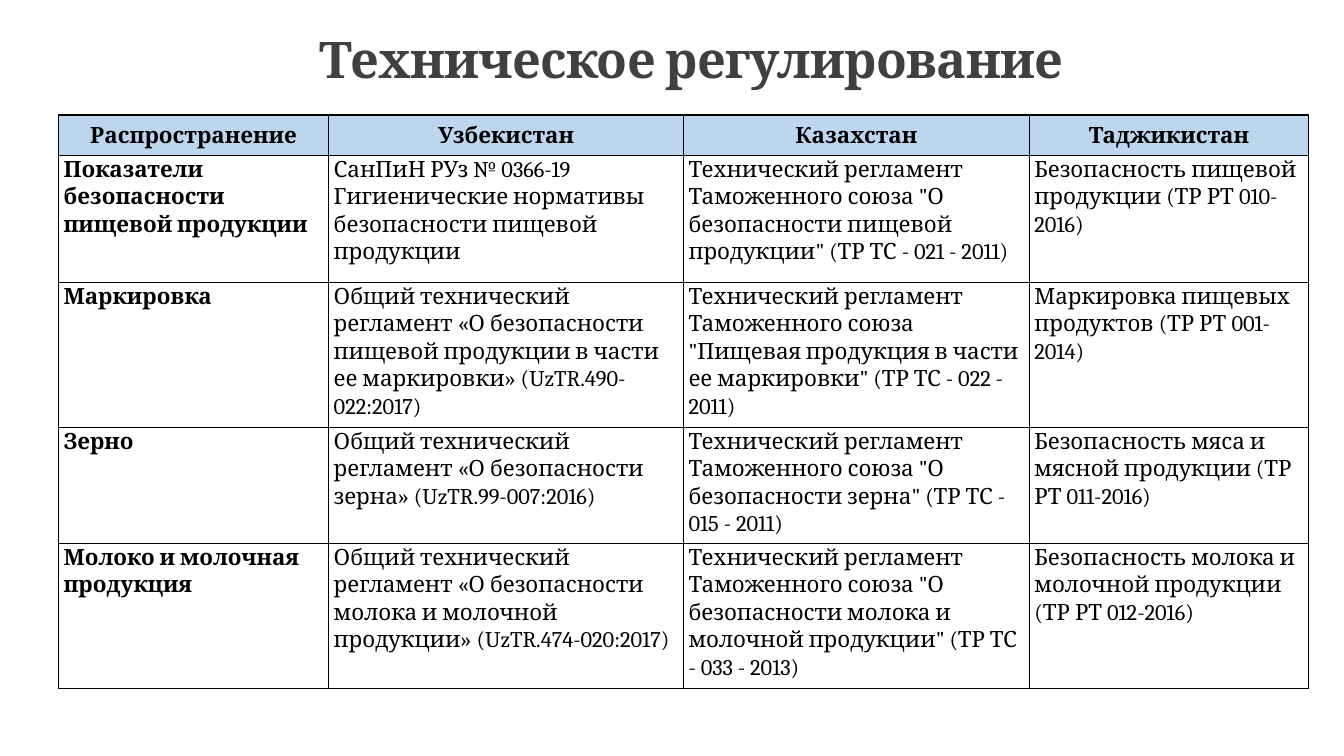
from pptx import Presentation
from pptx.dml.color import RGBColor
from pptx.enum.text import MSO_ANCHOR as Anchor, MSO_AUTO_SIZE as AutoSize, PP_ALIGN as Align
from pptx.oxml.ns import qn
from pptx.util import Inches, Pt
from lxml import etree

TITLE = "Техническое регулирование"
COUNTRIES = ["Распространение", "Узбекистан", "Казахстан", "Таджикистан"]
REGULATIONS = [
    ["Показатели безопасности пищевой продукции",
     "СанПиН РУз № 0366-19 Гигиенические нормативы безопасности пищевой продукции",
     'Технический регламент Таможенного союза "О безопасности пищевой продукции" (ТР ТС - 021 - 2011)',
     "Безопасность пищевой продукции (ТР РТ 010-2016)"],
    ["Маркировка",
     "Общий технический регламент «О безопасности пищевой продукции в части ее маркировки» (UzTR.490-022:2017)",
     'Технический регламент Таможенного союза "Пищевая продукция в части ее маркировки" (ТР ТС - 022 - 2011)',
     "Маркировка пищевых продуктов (ТР РТ 001-2014)"],
    ["Зерно",
     "Общий технический регламент «О безопасности зерна» (UzTR.99-007:2016)",
     'Технический регламент Таможенного союза "О безопасности зерна" (ТР ТС - 015 - 2011)',
     "Безопасность мяса и мясной продукции (ТР РТ 011-2016)"],
    ["Молоко и молочная продукция",
     "Общий технический регламент «О безопасности молока и молочной продукции» (UzTR.474-020:2017)",
     'Технический регламент Таможенного союза "О безопасности молока и молочной продукции" (ТР ТС - 033 - 2013)',
     "Безопасность молока и молочной продукции (ТР РТ 012-2016)"],
]
COLUMN_WIDTHS = [2.68, 3.52, 3.43, 2.77]
ROW_HEIGHTS = [0.4, 1.26, 1.44, 1.15, 1.44]

BLACK = RGBColor(0x00, 0x00, 0x00)
DARK_GREY = RGBColor(0x40, 0x40, 0x40)
HEADER_BLUE = RGBColor(0xBD, 0xD6, 0xEE)

TITLE_PLACE = {"left": Inches(1.36), "top": Inches(0.18), "width": Inches(11), "height": Inches(0.75)}
TITLE_FRAME = {"word_wrap": True, "auto_size": AutoSize.NONE, "vertical_anchor": Anchor.BOTTOM}
TITLE_FONT = {"name": "Cambria", "size": Pt(36), "bold": True}
CELL_FONT = {"name": "Cambria", "size": Pt(16)}
CELL_FRAME = {"margin_left": Inches(0.05), "margin_right": Inches(0.05), "margin_top": 0, "margin_bottom": 0}


def apply(target, values):
    for name, value in values.items():
        setattr(target, name, value)


def add_borders(cell):
    properties = cell._tc.get_or_add_tcPr()
    for side in ("lnL", "lnR", "lnT", "lnB"):
        border = etree.SubElement(properties, qn(f"a:{side}"), w=str(Pt(1)))
        fill = etree.SubElement(border, qn("a:solidFill"))
        etree.SubElement(fill, qn("a:srgbClr"), val=str(BLACK))


def fill_cell(cell, wording, is_header, is_bold):
    add_borders(cell)
    apply(cell, CELL_FRAME)
    cell.vertical_anchor = Anchor.MIDDLE if is_header else Anchor.TOP
    if is_header:
        cell.fill.solid()
        cell.fill.fore_color.rgb = HEADER_BLUE
    else:
        cell.fill.background()
    paragraph = cell.text_frame.paragraphs[0]
    apply(paragraph, {"line_spacing": 1.07, "alignment": Align.CENTER if is_header else Align.LEFT})
    run = paragraph.add_run()
    run.text = wording
    apply(run.font, {**CELL_FONT, "bold": is_bold})
    run.font.color.rgb = BLACK


def add_title(slide):
    title = slide.shapes.title
    apply(title, TITLE_PLACE)
    apply(title.text_frame, TITLE_FRAME)
    paragraph = title.text_frame.paragraphs[0]
    paragraph.alignment = Align.CENTER
    run = paragraph.add_run()
    run.text = TITLE
    apply(run.font, TITLE_FONT)
    run.font.color.rgb = DARK_GREY
    run._r.get_or_add_rPr().set("spc", "-50")


def add_regulations(slide):
    rows = [COUNTRIES] + REGULATIONS
    table = slide.shapes.add_table(
        len(rows), len(COUNTRIES), Inches(0.58), Inches(1.14),
        Inches(sum(COLUMN_WIDTHS)), Inches(sum(ROW_HEIGHTS))).table
    apply(table, {"first_row": False, "horz_banding": False})
    for column, width in zip(table.columns, COLUMN_WIDTHS):
        column.width = Inches(width)
    for r, (wordings, height) in enumerate(zip(rows, ROW_HEIGHTS)):
        table.rows[r].height = Inches(height)
        for c, wording in enumerate(wordings):
            fill_cell(table.cell(r, c), wording, r == 0, r == 0 or c == 0)


def main():
    deck = Presentation()
    apply(deck, {"slide_width": Inches(13.33), "slide_height": Inches(7.5)})
    slide = deck.slides.add_slide(deck.slide_layouts[5])
    add_title(slide)
    add_regulations(slide)
    deck.save("out.pptx")


if __name__ == "__main__":
    main()
